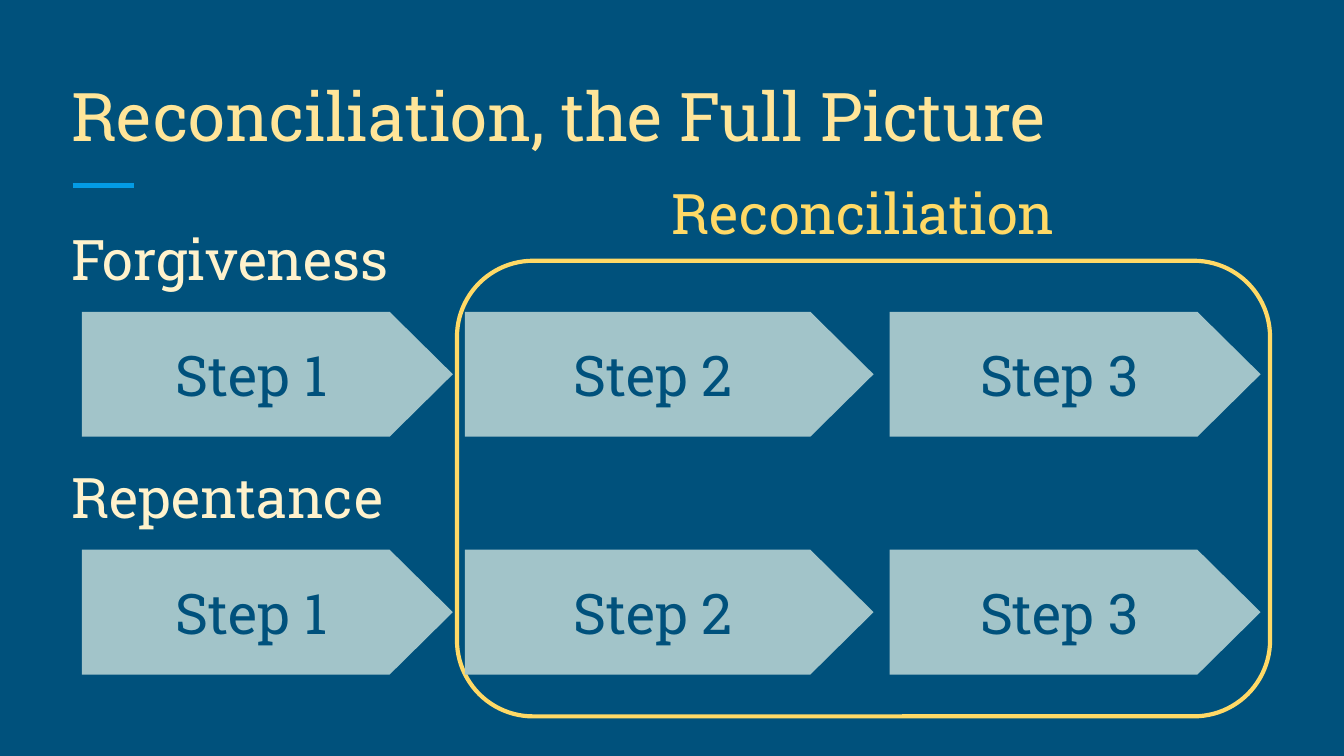
from dataclasses import dataclass

from lxml import etree
from pptx import Presentation
from pptx.dml.color import RGBColor
from pptx.enum.shapes import MSO_CONNECTOR, MSO_SHAPE
from pptx.enum.text import MSO_ANCHOR, MSO_AUTO_SIZE, PP_ALIGN
from pptx.oxml.ns import qn
from pptx.util import Inches, Pt

STRAIGHT = MSO_CONNECTOR.STRAIGHT
PENTAGON, ROUNDED = MSO_SHAPE.PENTAGON, MSO_SHAPE.ROUNDED_RECTANGLE
TOP, MIDDLE, BOTTOM = MSO_ANCHOR.TOP, MSO_ANCHOR.MIDDLE, MSO_ANCHOR.BOTTOM
LEFT, CENTER = PP_ALIGN.LEFT, PP_ALIGN.CENTER
NO_AUTOFIT = MSO_AUTO_SIZE.NONE
TITLE_ONLY = 5

FONT = "Roboto Slab"
NAVY, BLUE, TEAL = "00517C", "039BE5", "A2C4C9"
GOLD, PALE_GOLD, CREAM = "FFD966", "FFE599", "FFF2CC"

# A 16:9 page, in inches
PAGE_WIDTH = 10
PAGE_HEIGHT = PAGE_WIDTH * 9 / 16

# Grid in inches: one row per process, one column per step
FIRST_ROW, ROW_PITCH = 2.32, 1.77
ARROW_HEIGHT, LABEL_RISE = 0.93, 0.8
HEADING_LEFT, HEADING_WIDTH, HEADING_HEIGHT = 0.43, 9.15, 0.75


@dataclass(frozen=True)
class Area:
    left: float
    top: float
    width: float
    height: float

    def lengths(self) -> list:
        return [Inches(n) for n in (self.left, self.top, self.width, self.height)]


@dataclass(frozen=True)
class Step:
    text: str
    left: float
    width: float


@dataclass(frozen=True)
class TextStyle:
    size: int
    color: str
    align: int = LEFT
    anchor: int = BOTTOM


STEPS = [Step("Step 1", 0.61, 2.76), Step("Step 2", 3.46, 3.04), Step("Step 3", 6.62, 2.76)]
PROCESSES = ["Forgiveness", "Repentance"]

TITLE_STYLE = TextStyle(36, PALE_GOLD)
LABEL_STYLE = TextStyle(30, CREAM)
STEP_STYLE = TextStyle(30, NAVY, CENTER, MIDDLE)
CAPTION_STYLE = TextStyle(30, GOLD, CENTER, TOP)


def color(hex_value: str) -> RGBColor:
    return RGBColor.from_string(hex_value)


def write(box, text: str, style: TextStyle) -> None:
    frame = box.text_frame
    inset = Inches(0.1)
    frame_format = {
        "word_wrap": True, "auto_size": NO_AUTOFIT, "vertical_anchor": style.anchor,
        "margin_left": inset, "margin_right": inset,
        "margin_top": inset, "margin_bottom": inset,
    }
    for name, value in frame_format.items():
        setattr(frame, name, value)
    para = frame.paragraphs[0]
    para.alignment = style.align
    span = para.add_run()
    span.text = text
    for name, value in {"name": FONT, "size": Pt(style.size)}.items():
        setattr(span.font, name, value)
    span.font.color.rgb = color(style.color)


def add_text(page, area: Area, text: str, style: TextStyle) -> None:
    write(page.shapes.add_textbox(*area.lengths()), text, style)


def set_title(page, area: Area, text: str) -> None:
    title = page.shapes.title
    for name, value in zip(("left", "top", "width", "height"), area.lengths()):
        setattr(title, name, value)
    write(title, text, TITLE_STYLE)


def add_accent(page, left: float, right: float, top: float) -> None:
    ends = [Inches(n) for n in (left, top, right, top)]
    accent = page.shapes.add_connector(STRAIGHT, *ends)
    accent.line.color.rgb = color(BLUE)
    accent.line.width = Pt(3)
    etree.SubElement(accent._element.spPr, qn("a:effectLst"))


def add_frame(page, area: Area) -> None:
    frame = page.shapes.add_shape(ROUNDED, *area.lengths())
    frame.shadow.inherit = False
    frame.adjustments[0] = 0.167
    frame.fill.background()
    frame.line.color.rgb = color(GOLD)
    frame.line.width = Pt(2.25)


def add_process(page, row: int, name: str) -> None:
    top = FIRST_ROW + row * ROW_PITCH
    label = Area(HEADING_LEFT, top - LABEL_RISE, HEADING_WIDTH, HEADING_HEIGHT)
    add_text(page, label, name, LABEL_STYLE)
    group = page.shapes.add_group_shape()
    for step in STEPS:
        area = Area(step.left, top, step.width, ARROW_HEIGHT)
        arrow = group.shapes.add_shape(PENTAGON, *area.lengths())
        arrow.shadow.inherit = False
        arrow.adjustments[0] = 0.506
        arrow.fill.solid()
        arrow.fill.fore_color.rgb = color(TEAL)
        arrow.line.fill.background()
        write(arrow, step.text, STEP_STYLE)


def main() -> None:
    deck = Presentation()
    deck.slide_width, deck.slide_height = Inches(PAGE_WIDTH), Inches(PAGE_HEIGHT)
    page = deck.slides.add_slide(deck.slide_layouts[TITLE_ONLY])
    page.background.fill.solid()
    page.background.fill.fore_color.rgb = color(NAVY)

    # Title with its accent line
    set_title(page, Area(HEADING_LEFT, 0.5, HEADING_WIDTH, HEADING_HEIGHT),
              "Reconciliation, the Full Picture")
    add_accent(page, 0.54, 1, 1.38)

    # Frame around the shared steps, then the two processes
    add_frame(page, Area(3.4, 1.94, 6.05, 3.39))
    for row, name in enumerate(PROCESSES):
        add_process(page, row, name)

    # Caption above the frame
    add_text(page, Area(4.49, 1.23, 3.87, 0.71), "Reconciliation", CAPTION_STYLE)
    deck.save("out.pptx")


if __name__ == "__main__":
    main()
